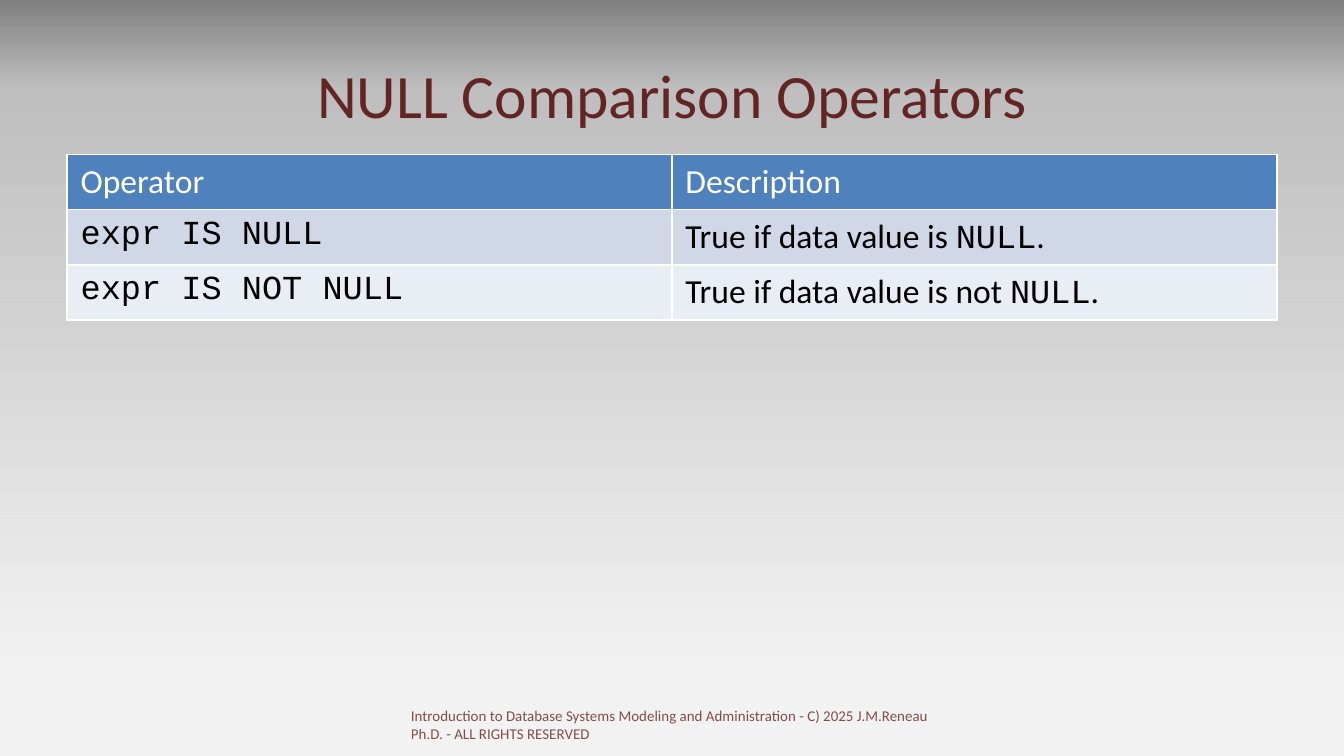
from copy import deepcopy

from pptx import Presentation
from pptx.dml.color import RGBColor
from pptx.enum.text import MSO_ANCHOR as Anchor, PP_ALIGN as Align
from pptx.oxml import parse_xml
from pptx.oxml.ns import nsdecls, qn
from pptx.util import Inches, Pt

SANS, MONO = "Calibri", "Courier New"
MAROON, WHITE, BLACK = "632523", "FFFFFF", "000000"
HEAD, BANDS = "4F81BD", ("D0D8E8", "E9EDF4")
STOPS = ((0, "808080"), (0.12, "BFBFBF"), (0.9, "F2F2F2"))

# Each cell is a list of (text, font) runs
ROWS = [
    [[("Operator", SANS)], [("Description", SANS)]],
    [[("expr IS NULL", MONO)],
     [("True if data value is ", SANS), ("NULL", MONO), (".", SANS)]],
    [[("expr IS NOT NULL", MONO)],
     [("True if data value is not ", SANS), ("NULL", MONO), (".", SANS)]],
]


def color(code):
    return RGBColor.from_string(code)


def style(run, size, code, font=SANS):
    run.font.size = Pt(size)
    run.font.name = font
    run.font.color.rgb = color(code)


def paint(slide):
    """Fill the background with a top-to-bottom gradient."""
    fill = slide.background.fill
    fill.gradient()
    fill.gradient_angle = 270
    group = slide.element.find(".//" + qn("a:gsLst"))
    group.append(deepcopy(group[-1]))
    for stop, (place, code) in zip(fill.gradient_stops, STOPS):
        stop.position = place
        stop.color.rgb = color(code)


def add_text(slide, box, text, size, code):
    frame = slide.shapes.add_textbox(*map(Inches, box)).text_frame
    frame.word_wrap = True
    frame.text = text
    style(frame.paragraphs[0].runs[0], size, code)
    return frame


def add_title(slide, box):
    frame = add_text(slide, box, "NULL Comparison Operators", 33, MAROON)
    frame.vertical_anchor = Anchor.MIDDLE
    frame.paragraphs[0].alignment = Align.CENTER


def add_foot(slide, box):
    frame = add_text(
        slide, box,
        "Introduction to Database Systems Modeling and Administration - "
        "C) 2025 J.M.Reneau Ph.D. - ALL RIGHTS RESERVED", 8, MAROON)
    # Text at 80% opacity
    tint = frame.paragraphs[0].runs[0]._r.find(".//" + qn("a:srgbClr"))
    tint.append(parse_xml(f'<a:alpha {nsdecls("a")} val="80000"/>'))


def frame_cell(cell, code, width):
    """Draw all four borders; they must come before the cell's fill."""
    props = cell._tc.get_or_add_tcPr()
    for side in ("lnL", "lnR", "lnT", "lnB"):
        props.append(parse_xml(
            f'<a:{side} {nsdecls("a")} w="{Pt(width)}"><a:solidFill>'
            f'<a:srgbClr val="{code}"/></a:solidFill></a:{side}>'))


def add_grid(slide, box):
    count = len(ROWS)
    table = slide.shapes.add_table(count, 2, *map(Inches, box)).table
    for r, row in enumerate(ROWS):
        table.rows[r].height = Inches(box[3] / count)
        ground = BANDS[(r - 1) % 2] if r else HEAD
        for c, parts in enumerate(row):
            cell = table.cell(r, c)
            frame_cell(cell, WHITE, 1)
            cell.fill.solid()
            cell.fill.fore_color.rgb = color(ground)
            para = cell.text_frame.paragraphs[0]
            for text, font in parts:
                run = para.add_run()
                run.text = text
                style(run, 18, BLACK if r else WHITE, font)
                run.font.bold = False


def main():
    deck = Presentation()
    # Widescreen, 16:9
    deck.slide_width, deck.slide_height = Inches(10), Inches(10 * 9 / 16)
    slide = deck.slides.add_slide(deck.slide_layouts[6])
    paint(slide)
    add_title(slide, (0.5, 0.23, 9, 0.94))
    add_grid(slide, (0.5, 1.15, 9, 1.23))
    add_foot(slide, (2.96, 5.21, 4.06, 0.3))
    deck.save("out.pptx")


if __name__ == "__main__":
    main()
